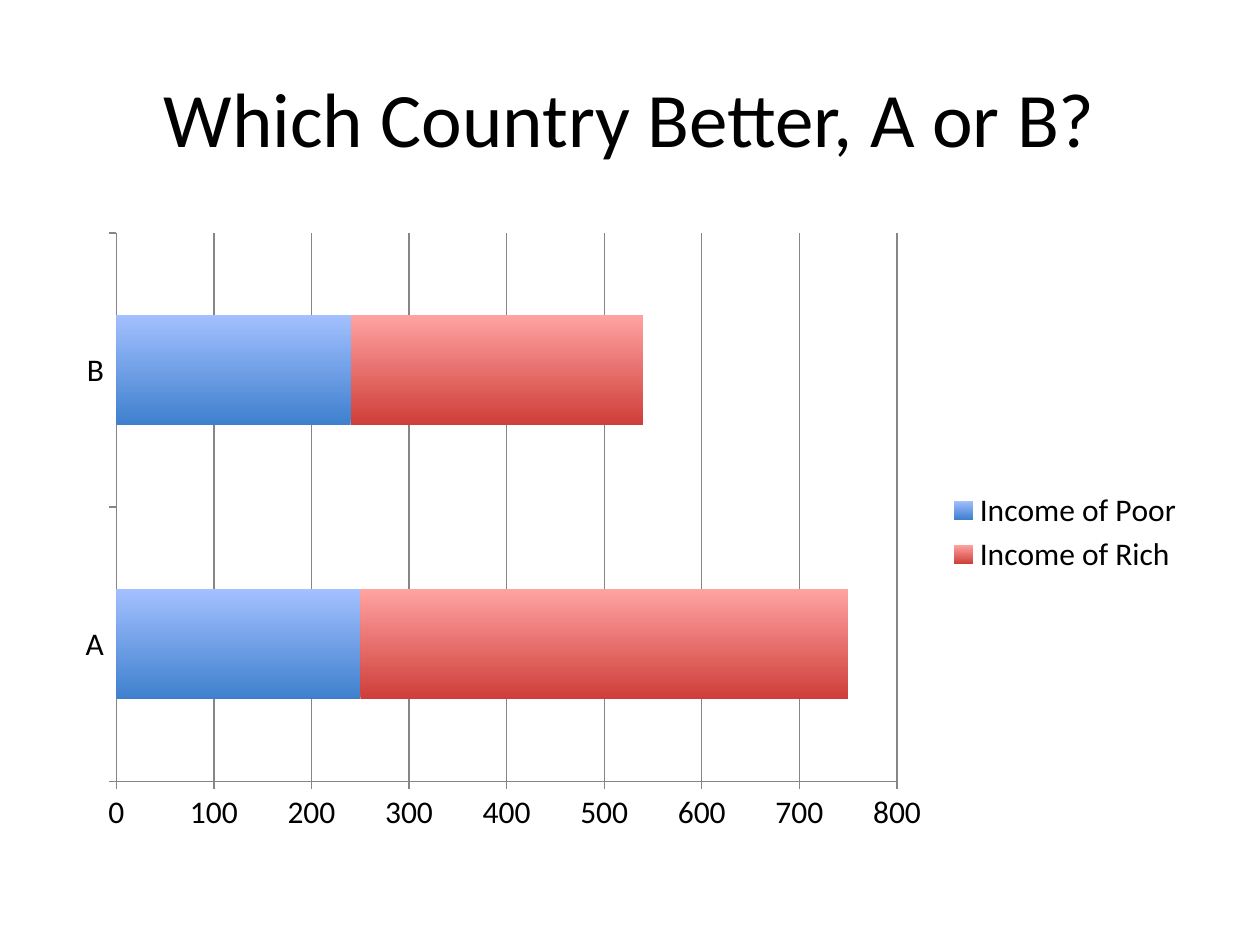
"""Build a title slide with a stacked bar chart comparing two countries."""
from pptx import Presentation, util as u
from pptx.chart.data import CategoryChartData
from pptx.dml.color import RGBColor as Rgb
from pptx.enum import chart as ch, text

theme = dict(
    font="Calibri", ink="000000", line="868686", title=44, body=18,
    bars=[("3F80CE", "A3C0FF"), ("CF3E3A", "FFA3A1")],
)


def style(font, size):
    look = dict(name=theme["font"], size=u.Pt(size), bold=False)
    for key, val in look.items():
        setattr(font, key, val)
    font.color.rgb = Rgb.from_string(theme["ink"])


def place(wide, high, top, tall):
    return int(wide * 0.05), int(high * top), int(wide * 0.9), int(high * tall)


deck = Presentation()
deck.slide_width, deck.slide_height = u.Inches(10), u.Inches(7.5)
size = deck.slide_width, deck.slide_height
slide = deck.slides.add_slide(deck.slide_layouts[5])

title = slide.shapes.title
for key, val in zip(("left", "top", "width", "height"), place(*size, 0.04, 1 / 6)):
    setattr(title, key, val)
frame = title.text_frame
frame.text = "Which Country Better, A or B?"
frame.vertical_anchor = text.MSO_ANCHOR.MIDDLE
para = frame.paragraphs[0]
para.alignment = text.PP_ALIGN.CENTER
style(para.runs[0].font, theme["title"])

data = CategoryChartData()
data.categories = ["A", "B"]
data.add_series("Income of Poor", (250, 240))
data.add_series("Income of Rich", (500, 300))
chart = slide.shapes.add_chart(
    ch.XL_CHART_TYPE.BAR_STACKED, *place(*size, 7 / 30, 0.66), data
).chart
style(chart.font, theme["body"])
chart.has_title = False
chart.has_legend = True
legend = dict(position=ch.XL_LEGEND_POSITION.RIGHT, include_in_layout=False)
for key, val in legend.items():
    setattr(chart.legend, key, val)

plot = chart.plots[0]
for key, val in dict(gap_width=150, overlap=100, vary_by_categories=False).items():
    setattr(plot, key, val)
for bar, tones in zip(plot.series, theme["bars"]):
    fill = bar.format.fill
    fill.gradient()
    fill.gradient_angle = 90
    for stop, tone in zip(fill.gradient_stops, tones):
        stop.color.rgb = Rgb.from_string(tone)

cats, vals = chart.category_axis, chart.value_axis
cats.has_major_gridlines, vals.has_major_gridlines = False, True
for key, val in dict(minimum_scale=0, maximum_scale=800, major_unit=100).items():
    setattr(vals, key, val)
for axis in (cats, vals):
    axis.major_tick_mark = ch.XL_TICK_MARK.OUTSIDE
    axis.minor_tick_mark = ch.XL_TICK_MARK.NONE
for part in (cats, vals, vals.major_gridlines):
    part.format.line.width = u.Pt(0.75)
    part.format.line.color.rgb = Rgb.from_string(theme["line"])

deck.save("out.pptx")
